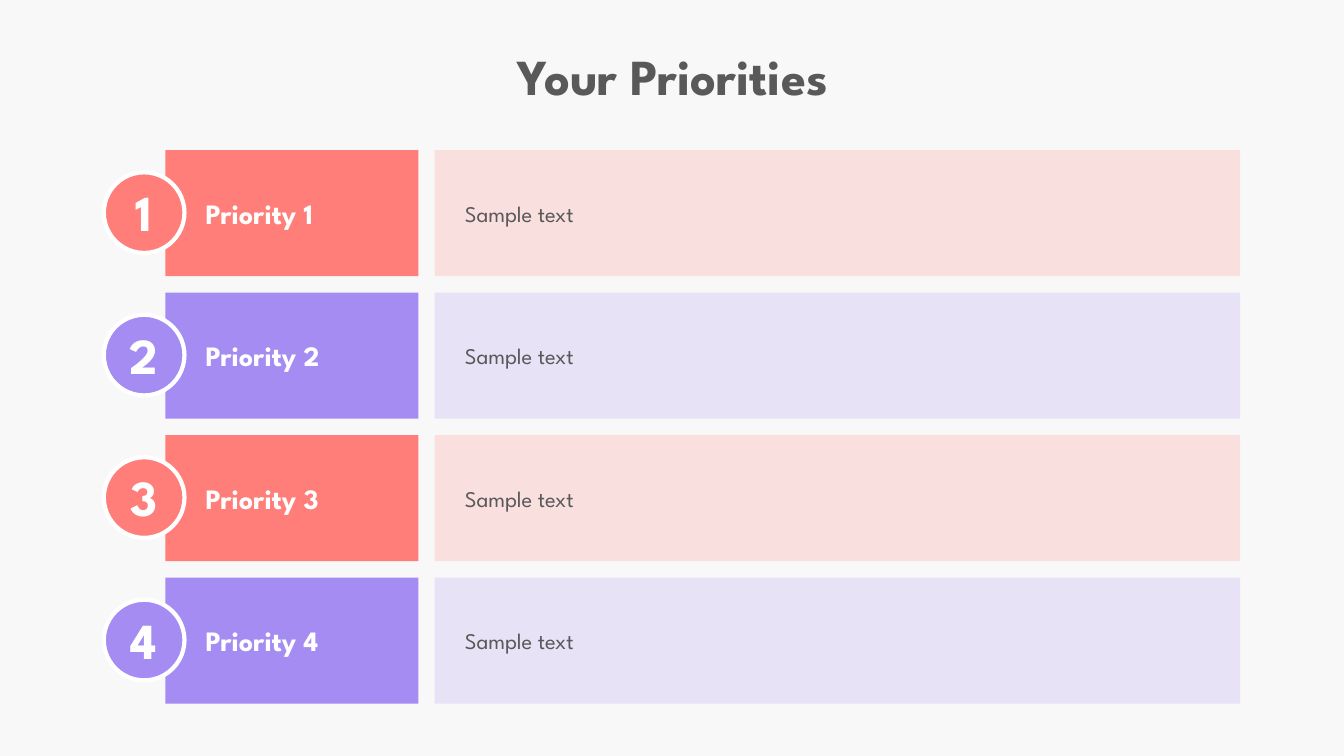
from lxml.etree import SubElement
from pptx import Presentation
from pptx.dml.color import RGBColor
from pptx.enum.shapes import MSO_SHAPE
from pptx.enum.text import MSO_ANCHOR, MSO_AUTO_SIZE, PP_ALIGN
from pptx.oxml.ns import qn
from pptx.util import Inches, Pt

FONT = "League Spartan"
CORAL, VIOLET = "FF7E79", "A48CF2"
GREY, WHITE, PAPER = "595959", "FFFFFF", "F8F8F8"
PRIORITIES = [
    ("Priority 1", "Sample text", CORAL),
    ("Priority 2", "Sample text", VIOLET),
    ("Priority 3", "Sample text", CORAL),
    ("Priority 4", "Sample text", VIOLET),
]
FIRST_TOP, LAST_TOP, BAR_HEIGHT = 1.49, 5.73, 1.25


def paint(color_format, hex_color):
    color_format.rgb = RGBColor.from_string(hex_color)


def write(frame, text, size, color, bold, align, insets):
    frame.word_wrap = True
    (frame.margin_left, frame.margin_top,
     frame.margin_right, frame.margin_bottom) = map(Inches, insets)
    paragraph = frame.paragraphs[0]
    paragraph.text = text
    paragraph.alignment = align
    font = paragraph.runs[0].font
    font.name, font.size, font.bold = FONT, Pt(size), bold
    paint(font.color, color)


def add_filled(slide, preset, box, color, opacity=100):
    shape = slide.shapes.add_shape(preset, *map(Inches, box))
    shape.shadow.inherit = False
    shape.fill.solid()
    paint(shape.fill.fore_color, color)
    if opacity < 100:
        fill_color = shape.fill._xPr.find(qn("a:solidFill"))[0]
        SubElement(fill_color, qn("a:alpha"), val=str(opacity * 1000))
    shape.line.fill.background()
    return shape


def add_bar(slide, box, fill, opacity, text, size, color, bold, insets):
    bar = add_filled(slide, MSO_SHAPE.RECTANGLE, box, fill, opacity)
    bar.text_frame.vertical_anchor = MSO_ANCHOR.MIDDLE
    write(bar.text_frame, text, size, color, bold, PP_ALIGN.LEFT, insets)


def add_heading(slide, box, text, color):
    heading = slide.shapes.add_textbox(*map(Inches, box))
    write(heading.text_frame, text, 36, color, True, PP_ALIGN.CENTER,
          (0.1, 0.05, 0.1, 0.05))
    heading.text_frame.auto_size = MSO_AUTO_SIZE.SHAPE_TO_FIT_TEXT


def add_badge(slide, top, number, color):
    circle = add_filled(slide, MSO_SHAPE.OVAL, (1.03, top, 0.8, 0.8), color)
    paint(circle.line.color, WHITE)
    circle.line.width = Pt(3)
    add_heading(slide, (1.15, top + 0.04, 0.56, 0.71), str(number), WHITE)


def add_priority(slide, top, number, name, detail, color):
    add_bar(slide, (1.64, top, 2.51, BAR_HEIGHT), color, 100,
            name, 20, WHITE, True, (0.4, 0.3, 0.1, 0.3))
    add_bar(slide, (4.31, top, 7.99, BAR_HEIGHT), color, 20,
            detail, 16, GREY, False, (0.3, 0.2, 0.3, 0.2))
    add_badge(slide, top + 0.22, number, color)


def main():
    deck = Presentation()
    deck.slide_width, deck.slide_height = Inches(13.33), Inches(7.5)
    slide = deck.slides.add_slide(deck.slide_layouts[6])
    slide.background.fill.solid()
    paint(slide.background.fill.fore_color, PAPER)

    add_heading(slide, (0.71, 0.4, 11.92, 0.71), "Your Priorities", GREY)
    pitch = (LAST_TOP - FIRST_TOP) / (len(PRIORITIES) - 1)
    for index, (name, detail, color) in enumerate(PRIORITIES):
        add_priority(slide, FIRST_TOP + index * pitch, index + 1,
                     name, detail, color)

    deck.save("out.pptx")


if __name__ == "__main__":
    main()
